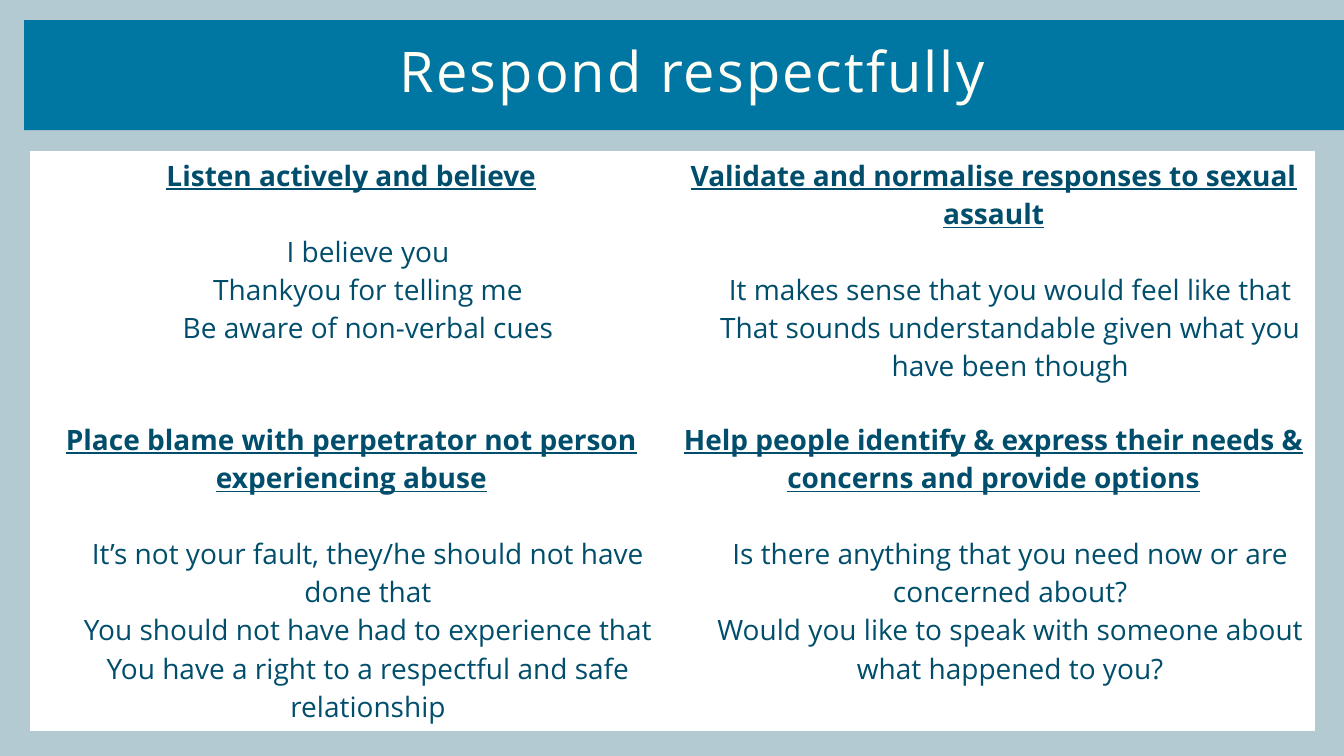
from pptx import Presentation
from pptx.dml.color import RGBColor
from pptx.enum.shapes import MSO_SHAPE as Shape
from pptx.enum.text import MSO_ANCHOR as Anchor, MSO_AUTO_SIZE as Fit, PP_ALIGN as Align
from pptx.util import Inches, Pt

TITLE = "Respond respectfully"
CELLS = [
    [("Listen actively and believe",
      ["I believe you", "Thankyou for telling me", "Be aware of non-verbal cues"]),
     ("Validate and normalise responses to sexual assault",
      ["It makes sense that you would feel like that",
       "That sounds understandable given what you have been though"])],
    [("Place blame with perpetrator not person experiencing abuse",
      ["It’s not your fault, they/he should not have done that",
       "You should not have had to experience that",
       "You have a right to a respectful and safe relationship"]),
     ("Help people identify & express their needs & concerns and provide options",
      ["Is there anything that you need now or are concerned about?",
       "Would you like to speak with someone about what happened to you?"])],
]
FONT = "Open Sans"
WHITE, CREAM, BLUE, NAVY, PALE = "FFFFFF", "FFFFF6", "0076A3", "004E6C", "B3CAD3"
WIDTH, HEIGHT = 13.33, 7.5
ROWS = [2.62, 3.13]
COL = 6.37
LINE = 27.2  # height of one 20 pt line, in points


def paint(fill, color):
    fill.solid()
    fill.fore_color.rgb = RGBColor.from_string(color)


def write(frame, text, size=20, color=NAVY, bold=False, line=False,
          first=False, before=0, indent=0):
    para = frame.paragraphs[0] if first else frame.add_paragraph()
    para.alignment = Align.CENTER
    if before:
        para.space_before = Pt(before)
    if indent:
        props = para._p.get_or_add_pPr()
        props.set("marL", str(Inches(indent)))
        props.set("indent", "0")
    run = para.add_run()
    run.text = text
    font = run.font
    font.name, font.size = FONT, Pt(size)
    font.bold, font.underline = bold, line
    font.color.rgb = RGBColor.from_string(color)
    return para


def main():
    prs = Presentation()
    prs.slide_width, prs.slide_height = Inches(WIDTH), Inches(HEIGHT)
    slide = prs.slides.add_slide(prs.slide_layouts[5])
    paint(slide.background.fill, PALE)

    band = slide.shapes.add_shape(Shape.RECTANGLE, Inches(0.24), Inches(0.2),
                                  Inches(WIDTH - 0.24), Inches(1.09))
    band.shadow.inherit = False
    paint(band.fill, BLUE)
    band.line.fill.background()

    title = slide.shapes.title
    title.left, title.top = Inches(1.2), Inches(0.2)
    title.width, title.height = Inches(11.34), Inches(0.73)
    # Bring the title in front of the band
    band._element.addnext(title._element)
    frame = title.text_frame
    frame.word_wrap, frame.auto_size = True, Fit.NONE
    frame.vertical_anchor = Anchor.TOP
    frame.margin_left = frame.margin_right = frame.margin_top = frame.margin_bottom = 0
    head = write(frame, TITLE, size=40, color=CREAM, first=True)
    head.line_spacing = Pt(60)
    head.runs[0].font._element.set("spc", "150")

    table = slide.shapes.add_table(len(ROWS), 2, Inches(0.3), Inches(1.5),
                                   Inches(2 * COL), Inches(sum(ROWS))).table
    table.first_row = table.horz_banding = False
    for r, row in enumerate(CELLS):
        table.rows[r].height = Inches(ROWS[r])
        for c, (topic, lines) in enumerate(row):
            cell = table.cell(r, c)
            paint(cell.fill, WHITE)
            write(cell.text_frame, topic, bold=True, line=True, first=True)
            for i, text in enumerate(lines):
                write(cell.text_frame, text, indent=0.33, before=0 if i else LINE)

    prs.save("out.pptx")


if __name__ == "__main__":
    main()
